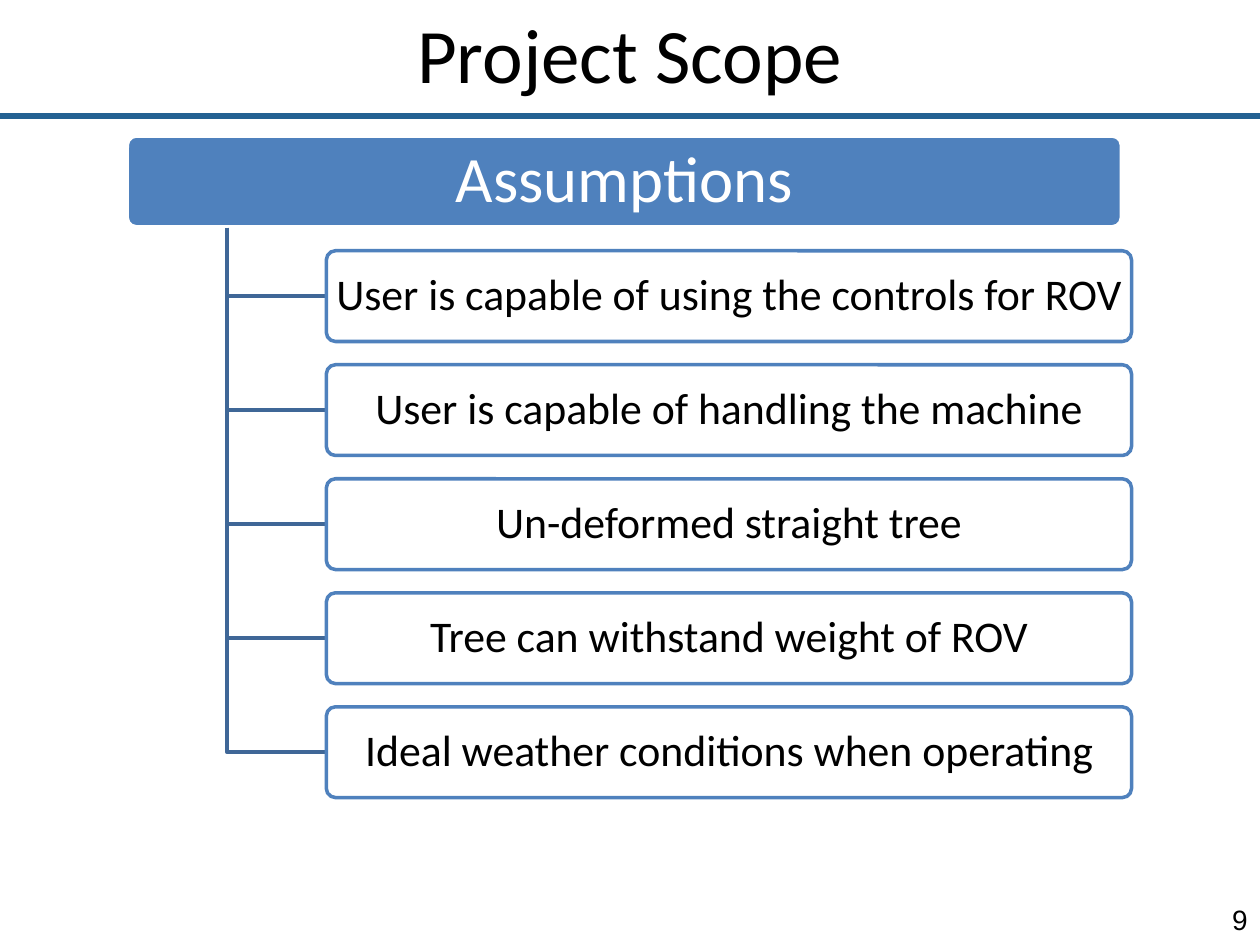
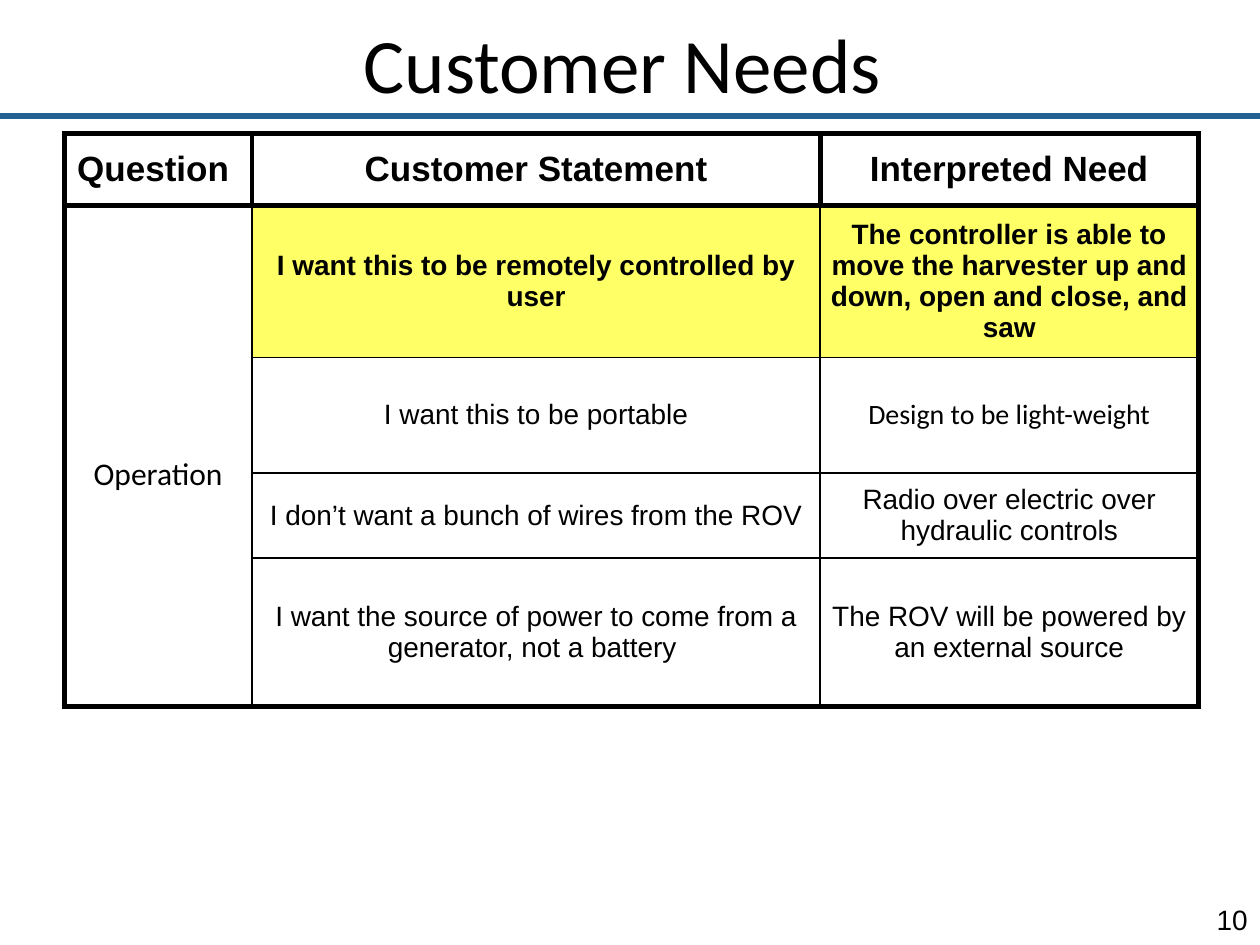
import pptx
import pptx.dml.color
import pptx.enum.shapes
import pptx.enum.text
import pptx.oxml
import pptx.oxml.ns
import pptx.util
from lxml import etree

WIDTH, HEIGHT = 10, 7.5
COLUMNS, ROWS = 100, 75
COLORS = {
    "ink": "000000",
    "paper": "FFFFFF",
    "rule": "236192",
    "box": "4F81BD",
    "branch": "3F6797",
    "highlight": "FFFF66",
}
ASSUMPTIONS = [
    "User is capable of using the controls for ROV",
    "User is capable of handling the machine",
    "Un-deformed straight tree",
    "Tree can withstand weight of ROV",
    "Ideal weather conditions when operating",
]
NEEDS = [
    ("Question ", "Customer Statement", "Interpreted Need"),
    ("Operation", "I want this to be remotely controlled by user",
     "The controller is able to move the harvester up and down, open and close, and saw"),
    ("", "I want this to be portable", "Design to be light-weight"),
    ("", "I don’t want a bunch of wires from the ROV",
     "Radio over electric over hydraulic controls"),
    ("", "I want the source of power to come from a generator, not a battery ",
     "The ROV will be powered by an external source"),
]
CALIBRI_CELLS = {"Operation", "Design to be light-weight"}
ALIGN = pptx.enum.text.PP_ALIGN
ANCHOR = pptx.enum.text.MSO_ANCHOR


def color(name):
    return pptx.dml.color.RGBColor.from_string(COLORS[name])


def x(columns):
    return pptx.util.Inches(columns * WIDTH / COLUMNS)


def y(rows):
    return pptx.util.Inches(rows * HEIGHT / ROWS)


class Deck:
    """Holds the shared style and the slide being drawn; lengths are grid columns and rows."""

    def __init__(self):
        self.presentation = pptx.Presentation()
        self.presentation.slide_width = x(COLUMNS)
        self.presentation.slide_height = y(ROWS)
        self.slide = None

    def new_slide(self, title, number, title_left, title_top):
        self.slide = self.presentation.slides.add_slide(self.presentation.slide_layouts[6])
        self.rule(9.2)
        self.label(str(number), (95, 71, 5, 4), "Arial", 16, ALIGN.RIGHT, ANCHOR.MIDDLE)
        self.label(title, (title_left, title_top, 90, 6.7), "Calibri", 44, ALIGN.CENTER, ANCHOR.TOP)

    def rule(self, row):
        """Draw the full-width line under the title."""
        line = self.slide.shapes.add_connector(
            pptx.enum.shapes.MSO_CONNECTOR.STRAIGHT, x(0), y(row), x(COLUMNS), y(row))
        line.line.color.rgb = color("rule")
        line.line.width = pptx.util.Pt(3.5)
        etree.SubElement(line._element.spPr, pptx.oxml.ns.qn("a:effectLst"))

    def set_text(self, frame, text, font, size, align=ALIGN.CENTER, ink="ink", bold=False):
        """Fill the first paragraph of a text frame with one run."""
        frame.word_wrap = True
        paragraph = frame.paragraphs[0]
        paragraph.alignment = align
        run = paragraph.add_run()
        run.text = text
        run.font.name = font
        run.font.size = pptx.util.Pt(size)
        run.font.bold = bold
        run.font.color.rgb = color(ink)
        return paragraph

    def label(self, text, area, font, size, align, anchor):
        left, top, width, height = area
        frame = self.slide.shapes.add_textbox(x(left), y(top), x(width), y(height)).text_frame
        frame.vertical_anchor = anchor
        self.set_text(frame, text, font, size, align)

    def card(self, text, area, size, fill, outline, ink):
        """Draw a rounded box with centred text."""
        left, top, width, height = area
        box = self.slide.shapes.add_shape(
            pptx.enum.shapes.MSO_SHAPE.ROUNDED_RECTANGLE, x(left), y(top), x(width), y(height))
        box.adjustments[0] = 0.1
        box.shadow.inherit = False
        box.fill.solid()
        box.fill.fore_color.rgb = color(fill)
        box.line.color.rgb = color(outline)
        box.line.width = pptx.util.Pt(2)
        frame = box.text_frame
        frame.margin_left = frame.margin_right = pptx.util.Inches(0.05)
        frame.margin_top = frame.margin_bottom = pptx.util.Inches(0.03)
        frame.vertical_anchor = ANCHOR.MIDDLE
        self.set_text(frame, text, "Calibri", size, ink=ink).line_spacing = 0.9

    def elbow(self, trunk, top, end, row):
        """Draw a branch down the trunk and across to a box."""
        outline = self.slide.shapes.build_freeform(x(trunk), y(top))
        outline.add_line_segments([(x(trunk), y(row)), (x(end), y(row))], close=False)
        branch = outline.convert_to_shape()
        branch.shadow.inherit = False
        branch.fill.background()
        branch.line.color.rgb = color("branch")
        branch.line.width = pptx.util.Pt(2)

    def table(self, left, top, widths, heights):
        grid = self.slide.shapes.add_table(
            len(heights), len(widths), x(left), y(top), x(sum(widths)), y(sum(heights))).table
        grid.first_row = grid.horz_banding = False
        for column, width in zip(grid.columns, widths):
            column.width = x(width)
        for row, height in zip(grid.rows, heights):
            row.height = y(height)
        return grid

    def borders(self, cell, widths):
        """Set cell borders from points keyed by side: L, R, T, B."""
        properties = cell._tc.get_or_add_tcPr()
        for side, points in widths.items():
            properties.append(pptx.oxml.parse_xml(
                f'<a:ln{side} {pptx.oxml.ns.nsdecls("a")} w="{pptx.util.Pt(points)}">'
                f'<a:solidFill><a:srgbClr val="{COLORS["ink"]}"/></a:solidFill></a:ln{side}>'))


def draw_scope(deck):
    deck.new_slide("Project Scope", 9, 5, 0)
    deck.card("Assumptions", (10.1, 10.8, 78.9, 7.2), 37, "box", "paper", "paper")
    left, first, pitch, height = 25.9, 19.9, 9.05, 7.2
    for index, assumption in enumerate(ASSUMPTIONS):
        top = first + index * pitch
        deck.elbow(18, 18.1, left, top + height / 2)
        deck.card(assumption, (left, top, 63.9, height), 25, "paper", "box", "ink")


def draw_needs(deck):
    deck.new_slide("Customer Needs ", 10, 5.1, 0.8)
    table = deck.table(5.1, 10.6, [14.9, 45.1, 30], [5.7, 11.8, 9.2, 6.6, 11.8])
    last_row, last_column = len(NEEDS) - 1, len(NEEDS[0]) - 1
    table.cell(1, 0).merge(table.cell(last_row, 0))
    for r, need in enumerate(NEEDS):
        for c, text in enumerate(need):
            cell = table.cell(r, c)
            if cell.is_spanned:
                continue
            header, topic = r == 0, c == 0
            bottom = r + cell.span_height - 1
            heavy = {"L": header or topic, "R": header or c == last_column,
                     "T": r <= 1, "B": header or bottom == last_row}
            deck.borders(cell, {side: 3 if thick else 1 for side, thick in heavy.items()})
            highlighted = r == 1 and not topic
            if highlighted:
                cell.fill.solid()
                cell.fill.fore_color.rgb = color("highlight")
            else:
                cell.fill.background()
            cell.vertical_anchor = ANCHOR.MIDDLE
            if topic and not header:
                cell.margin_top = pptx.util.Inches(0.35)
            elif not header:
                cell.margin_left = cell.margin_right = pptx.util.Inches(0.07)
                cell.margin_top = cell.margin_bottom = pptx.util.Inches(0.07)
            size = 20 if header else 18 if topic else 16
            font = "Calibri" if text in CALIBRI_CELLS else "Arial"
            deck.set_text(cell.text_frame, text, font, size, bold=header or highlighted)


def main():
    deck = Deck()
    draw_scope(deck)
    draw_needs(deck)
    deck.presentation.save("out.pptx")


if __name__ == "__main__":
    main()
